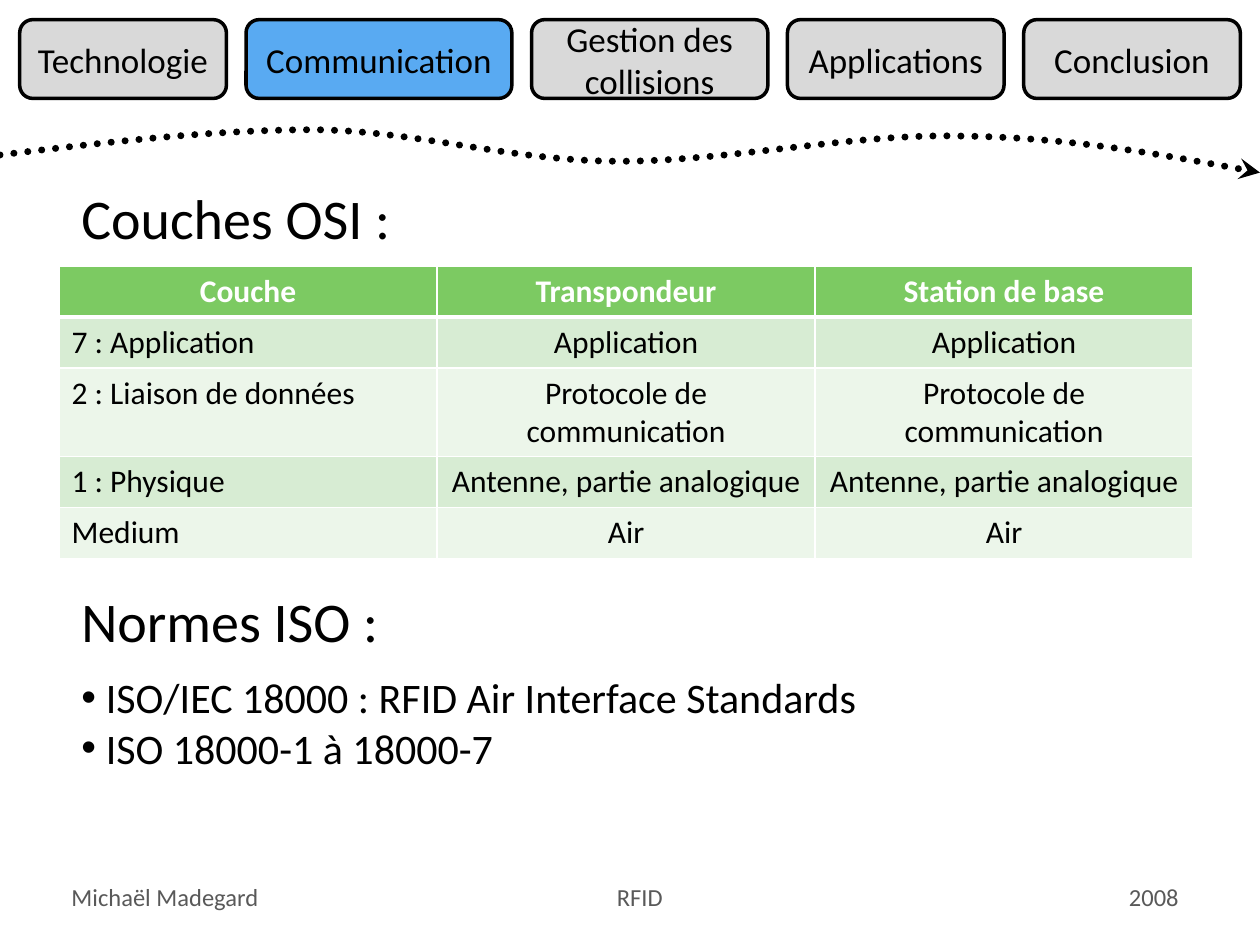
from dataclasses import dataclass

from lxml import etree
from pptx import Presentation
from pptx.dml.color import RGBColor
from pptx.enum.dml import MSO_LINE
from pptx.enum.shapes import MSO_SHAPE
from pptx.enum.text import MSO_ANCHOR, MSO_AUTO_SIZE, PP_ALIGN
from pptx.oxml.ns import qn
from pptx.util import Inches, Length, Pt

LEFT, CENTER, RIGHT = PP_ALIGN.LEFT, PP_ALIGN.CENTER, PP_ALIGN.RIGHT
MIDDLE = MSO_ANCHOR.MIDDLE
GROW = MSO_AUTO_SIZE.SHAPE_TO_FIT_TEXT
ROUND_RECT = MSO_SHAPE.ROUNDED_RECTANGLE
DOTS = MSO_LINE.ROUND_DOT

SLIDE_W, SLIDE_H = Inches(10), Inches(7.5)
COLUMNS = 64


@dataclass(frozen=True)
class Theme:
    font: str = "Calibri"
    ink: str = "000000"
    white: str = "FFFFFF"
    muted: str = "595959"
    tab: str = "D9D9D9"
    active: str = "59AAF2"
    header: str = "7CCA62"
    bands: tuple = ("D7ECD3", "ECF6EA")
    heading: int = 32
    bullet: int = 24
    nav: int = 20
    cell: int = 18
    footer: int = 14


@dataclass(frozen=True)
class Box:
    x: float
    y: float
    w: float
    h: float

    def lengths(self) -> tuple:
        return tuple(unit(v) for v in (self.x, self.y, self.w, self.h))


@dataclass(frozen=True)
class Tab:
    label: str
    width: float
    active: bool = False


@dataclass(frozen=True)
class Footer:
    text: str
    x: float
    width: float
    align: PP_ALIGN


THEME = Theme()

TABS = (
    Tab("Technologie", 10.5),
    Tab("Communication", 13.5, True),
    Tab("Gestion des\ncollisions", 12),
    Tab("Applications", 11),
    Tab("Conclusion", 11),
)

FOOTERS = (
    Footer("Michaël Madegard", 3, 15, LEFT),
    Footer("2008", 45.5, 15, RIGHT),
    Footer("RFID", 21, 23, CENTER),
)

LAYERS = (
    ("Couche", "Transpondeur", "Station de base"),
    ("7 : Application", "Application", "Application"),
    ("2 : Liaison de données", "Protocole de communication", "Protocole de communication"),
    ("1 : Physique", "Antenne, partie analogique", "Antenne, partie analogique"),
    ("Medium", "Air", "Air"),
)

STANDARDS = ("ISO/IEC 18000 : RFID Air Interface Standards", "ISO 18000-1 à 18000-7")

WAVE = (
    (0, 12.3), (8.4, 11.3), (16.9, 10.3), (25, 10.3),
    (33.1, 10.4), (40.2, 12.7), (48.7, 12.8),
    (57.3, 12.9), (67.6, 10.6), (76.1, 10.8),
    (84.7, 10.9), (92.3, 12.3), (100, 13.7),
)


def unit(n: float) -> Length:
    return Length(round(SLIDE_W * n / COLUMNS))


def rgb(value: str) -> RGBColor:
    return RGBColor.from_string(value)


def style(p, size: int, color: str = THEME.ink, align=LEFT, bold: bool = False) -> None:
    p.alignment = align
    for r in p.runs:
        r.font.name = THEME.font
        r.font.size = Pt(size)
        r.font.bold = bold
        r.font.color.rgb = rgb(color)


def add_text(s, box: Box, text: str, size: int, color: str = THEME.ink, align=LEFT):
    tf = s.shapes.add_textbox(*box.lengths()).text_frame
    tf.word_wrap = True
    tf.auto_size = GROW
    tf.text = text
    style(tf.paragraphs[0], size, color, align)
    return tf


def add_bullet(tf, text: str, space_before: float) -> None:
    p = tf.add_paragraph()
    pPr = p._p.get_or_add_pPr()
    indent = unit(1.25)
    pPr.set("marL", str(indent))
    pPr.set("indent", str(-indent))
    etree.SubElement(pPr, qn("a:buFont"), typeface="Arial")
    etree.SubElement(pPr, qn("a:buChar"), char="•")
    p.text = text
    p.space_before = Pt(space_before)
    style(p, THEME.bullet)


def add_wave(s) -> None:
    points = [(round(SLIDE_W * x / 100), round(SLIDE_W * y / 100)) for x, y in WAVE]
    builder = s.shapes.build_freeform(*points[0])
    builder.add_line_segments(points[1:], close=False)
    sp = builder.convert_to_shape()
    sp.shadow.inherit = False
    sp.fill.background()
    sp.line.color.rgb = rgb(THEME.ink)
    sp.line.width = Pt(4)
    sp.line.dash_style = DOTS
    ln = sp.line._get_or_add_ln()
    ln.set("cap", "rnd")
    etree.SubElement(ln, qn("a:tailEnd"), type="stealth")
    segments = list(sp._element.iter(qn("a:lnTo")))
    outline = segments[0].getparent()
    for i in range(0, len(segments), 3):
        curve = etree.SubElement(outline, qn("a:cubicBezTo"))
        for segment in segments[i:i + 3]:
            curve.append(segment[0])
            outline.remove(segment)


def add_tabs(s) -> None:
    x = 1
    for tab in TABS:
        sp = s.shapes.add_shape(ROUND_RECT, *Box(x, 1, tab.width, 4).lengths())
        sp.shadow.inherit = False
        sp.fill.solid()
        sp.fill.fore_color.rgb = rgb(THEME.active if tab.active else THEME.tab)
        sp.line.color.rgb = rgb(THEME.ink)
        sp.line.width = Pt(2)
        tf = sp.text_frame
        tf.word_wrap = True
        tf.vertical_anchor = MIDDLE
        tf.text = tab.label
        for p in tf.paragraphs:
            style(p, THEME.nav, align=CENTER)
        x += tab.width + 1


def set_borders(cell, bottom: float) -> None:
    tcPr = cell._tc.get_or_add_tcPr()
    for side, width in (("L", 1), ("R", 1), ("T", 1), ("B", bottom)):
        ln = etree.SubElement(tcPr, qn(f"a:ln{side}"), w=str(Pt(width)))
        fill = etree.SubElement(ln, qn("a:solidFill"))
        etree.SubElement(fill, qn("a:srgbClr"), val=THEME.white)


def add_layers(s) -> None:
    box = Box(3, 13.5, 57.6, 2.6 * len(LAYERS))
    table = s.shapes.add_table(len(LAYERS), len(LAYERS[0]), *box.lengths()).table
    for i, row in enumerate(LAYERS):
        head = i == 0
        for j, text in enumerate(row):
            cell = table.cell(i, j)
            set_borders(cell, 3 if head else 1)
            cell.fill.solid()
            cell.fill.fore_color.rgb = rgb(THEME.header if head else THEME.bands[(i - 1) % 2])
            cell.text_frame.text = text
            style(cell.text_frame.paragraphs[0], THEME.cell, THEME.white if head else THEME.ink,
                  CENTER if head or j else LEFT, head)


def main() -> None:
    prs = Presentation()
    prs.slide_width, prs.slide_height = SLIDE_W, SLIDE_H
    s = prs.slides.add_slide(prs.slide_layouts[6])
    add_wave(s)
    for f in FOOTERS:
        add_text(s, Box(f.x, 44.5, f.width, 2.2), f.text, THEME.footer, THEME.muted, f.align)
    add_layers(s)
    add_tabs(s)
    add_text(s, Box(3.5, 9, 49.5, 4.1), "Couches OSI :", THEME.heading)
    tf = add_text(s, Box(3.5, 29.5, 57, 10.1), "Normes ISO :", THEME.heading)
    for i, text in enumerate(STANDARDS):
        add_bullet(tf, text, 0 if i else 10)
    prs.save("out.pptx")


if __name__ == "__main__":
    main()
